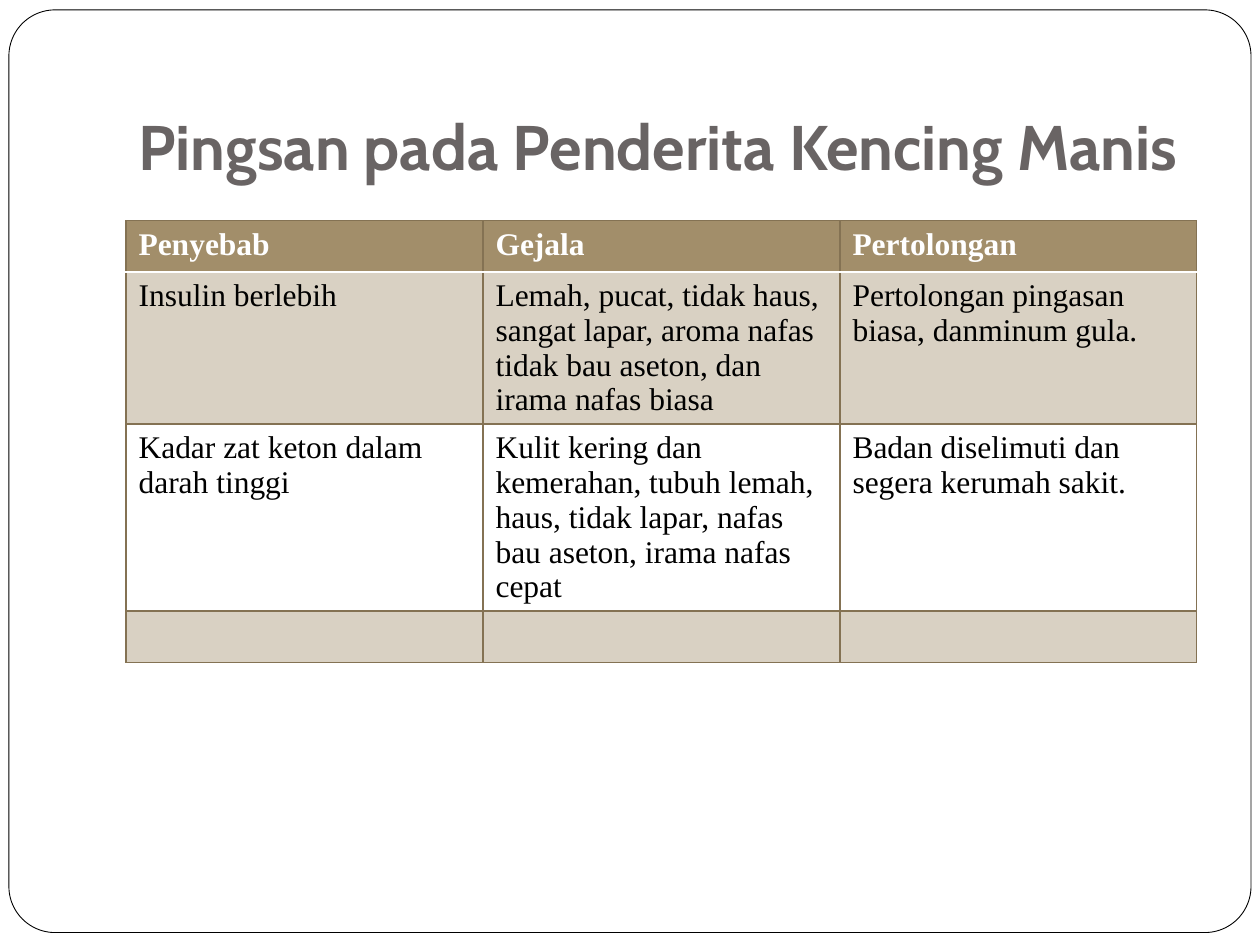
from lxml.etree import SubElement
from pptx import Presentation
from pptx.dml.color import RGBColor
from pptx.enum.shapes import MSO_SHAPE
from pptx.enum.text import MSO_ANCHOR, MSO_AUTO_SIZE, PP_ALIGN
from pptx.oxml.ns import qn
from pptx.util import Cm, Pt

HUES = {"white": "FFFFFF", "black": "000000", "title": "696464",
        "tan": "A28E6A", "edge": "847253"}
ROWS = [
    ["Penyebab", "Gejala", "Pertolongan"],
    ["Insulin berlebih",
     "Lemah, pucat, tidak haus, sangat lapar, aroma nafas tidak bau aseton, dan irama nafas biasa",
     "Pertolongan pingasan biasa, danminum gula."],
    ["Kadar zat keton dalam darah tinggi",
     "Kulit kering dan kemerahan, tubuh lemah, haus, tidak lapar, nafas bau aseton, irama nafas cepat",
     "Badan diselimuti dan segera kerumah sakit."],
    ["", "", ""],
]


def write(frame, text, font="Times New Roman", size=18, hue="black", bold=False):
    para = frame.paragraphs[0]
    para.alignment = PP_ALIGN.LEFT
    run = para.add_run()
    run.text = text
    run.font.name = font
    run.font.size = Pt(size)
    run.font.bold = bold
    run.font.color.rgb = RGBColor.from_string(HUES[hue])


def rule(cell, side, hue, width):
    line = SubElement(cell._tc.get_or_add_tcPr(), qn(f"a:ln{side}"), w=str(Pt(width)))
    fill = SubElement(line, qn("a:solidFill"))
    SubElement(fill, qn("a:srgbClr"), val=HUES[hue])


deck = Presentation()
deck.slide_width, deck.slide_height = Cm(25.4), Cm(19.05)
slide = deck.slides.add_slide(deck.slide_layouts[5])

# Rounded frame, behind everything
frame = slide.shapes.add_shape(MSO_SHAPE.ROUNDED_RECTANGLE,
                               Cm(0.18), Cm(0.2), Cm(25.04), Cm(18.6))
frame.adjustments[0] = 0.05
frame.shadow.inherit = False
frame.fill.solid()
frame.fill.fore_color.rgb = RGBColor.from_string(HUES["white"])
frame.line.color.rgb = RGBColor.from_string(HUES["black"])
frame.line.width = Pt(0.5)
slide.shapes._spTree.insert(2, frame._element)

# Title
title = slide.shapes.title
title.left, title.top, title.width, title.height = Cm(2.54), Cm(0.76), Cm(21.59), Cm(3.18)
body = title.text_frame
body.auto_size = MSO_AUTO_SIZE.NONE
body.word_wrap = True
body.vertical_anchor = MSO_ANCHOR.BOTTOM
body.margin_left = body.margin_right = body.margin_bottom = Cm(0.25)
body.margin_top = Cm(0.13)
write(body, "Pingsan pada Penderita Kencing Manis",
      font="Cabin", size=36, hue="title", bold=True)

# Table: rows grow with their text
grid = slide.shapes.add_table(len(ROWS), 3, Cm(2.54), Cm(4.45),
                              Cm(21.59), Cm(1.03 * len(ROWS))).table
for r, row in enumerate(ROWS):
    head = r == 0
    for c, text in enumerate(row):
        cell = grid.cell(r, c)

        # Borders, with a white rule under the header
        for side in "LRTB":
            white = (r, side) in [(0, "B"), (1, "T")]
            rule(cell, side, "white" if white else "edge", 1 if white else 0.75)

        # Solid header, then tinted and clear rows in turn
        if r == 2:
            cell.fill.background()
        else:
            cell.fill.solid()
            cell.fill.fore_color.rgb = RGBColor.from_string(HUES["tan"])
            if not head:
                tint = cell._tc.tcPr.find(qn("a:solidFill"))[0]
                SubElement(tint, qn("a:alpha"), val="40000")

        if text:
            write(cell.text_frame, text, hue="white" if head else "black", bold=head)

deck.save("out.pptx")
